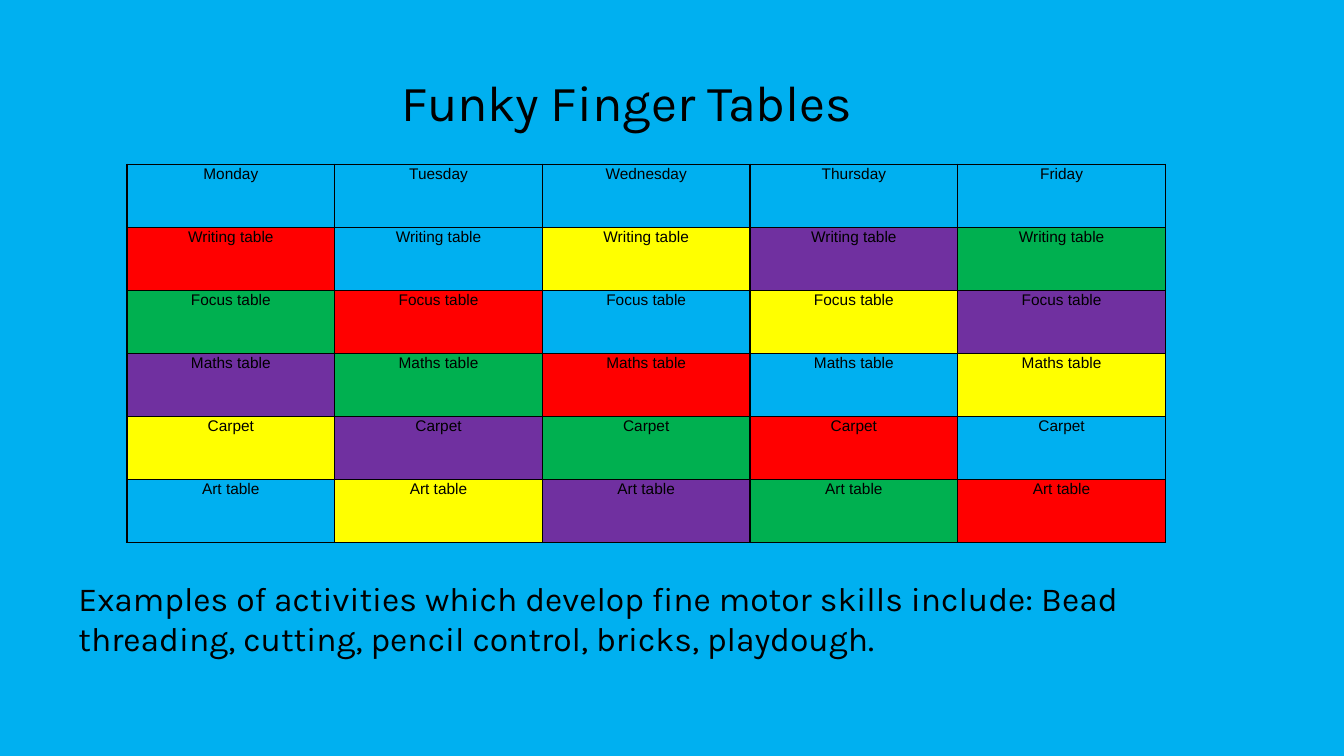
from dataclasses import dataclass

from lxml import etree
from pptx import Presentation
from pptx.dml.color import RGBColor
from pptx.enum.text import MSO_ANCHOR, MSO_AUTO_SIZE, PP_ALIGN
from pptx.oxml.ns import qn
from pptx.util import Inches, Pt

TOP = MSO_ANCHOR.TOP
FIXED = MSO_AUTO_SIZE.NONE
CENTER = PP_ALIGN.CENTER
TITLE_ONLY = 5


@dataclass(frozen=True)
class Theme:
    ink: str = "000000"
    sky: str = "00B0F0"
    red: str = "FF0000"
    yellow: str = "FFFF00"
    purple: str = "7030A0"
    green: str = "00B050"
    face: str = "Karla"
    grid_face: str = "Arial"
    title: int = 36
    body: int = 24
    cell: int = 11


THEME = Theme()
GROUPS = [THEME.red, THEME.sky, THEME.yellow, THEME.purple, THEME.green]
DAYS = ["Monday", "Tuesday", "Wednesday", "Thursday", "Friday"]
PLACES = ["Writing table", "Focus table", "Maths table", "Carpet", "Art table"]


def place(shape, box):
    shape.left, shape.top, shape.width, shape.height = map(Inches, box)


def style(para, face, size):
    para.font.name = face
    para.font.size = Pt(size)
    para.font.color.rgb = RGBColor.from_string(THEME.ink)


def add_title(slide, box, text):
    title = slide.shapes.title
    place(title, box)
    frame = title.text_frame
    frame.text = text
    frame.vertical_anchor = TOP
    frame.auto_size = FIXED
    para = frame.paragraphs[0]
    para.alignment = CENTER
    style(para, THEME.face, THEME.title)


def add_border(cell):
    props = cell._tc.get_or_add_tcPr()
    for side in ("lnL", "lnR", "lnT", "lnB"):
        line = etree.SubElement(props, qn(f"a:{side}"), w=str(Pt(1)))
        fill = etree.SubElement(line, qn("a:solidFill"))
        etree.SubElement(fill, qn("a:srgbClr"), val=THEME.ink)


def fill_cell(cell, text, color=None):
    cell.margin_left = cell.margin_right = Inches(0.07)
    cell.margin_top = cell.margin_bottom = 0
    cell.vertical_anchor = TOP
    add_border(cell)
    if color:
        cell.fill.solid()
        cell.fill.fore_color.rgb = RGBColor.from_string(color)
    else:
        cell.fill.background()
    cell.text = text
    para = cell.text_frame.paragraphs[0]
    para.alignment = CENTER
    para.line_spacing = 1.07
    para.space_after = Pt(8)
    style(para, THEME.grid_face, THEME.cell)


def add_rota(slide, box):
    """Each day, every colour group moves on to the next place."""
    rows, cols = len(PLACES) + 1, len(DAYS)
    table = slide.shapes.add_table(rows, cols, *map(Inches, box)).table
    table.first_row = table.horz_banding = False
    for col, day in enumerate(DAYS):
        fill_cell(table.cell(0, col), day)
        for row, spot in enumerate(PLACES):
            color = GROUPS[(col - row) % len(GROUPS)]
            fill_cell(table.cell(row + 1, col), spot, color)


def add_note(slide, box, text):
    frame = slide.shapes.add_textbox(*map(Inches, box)).text_frame
    frame.word_wrap = True
    frame.text = text
    style(frame.paragraphs[0], THEME.face, THEME.body)


def main():
    deck = Presentation()
    deck.slide_width, deck.slide_height = Inches(13.33), Inches(7.5)
    slide = deck.slides.add_slide(deck.slide_layouts[TITLE_ONLY])
    back = slide.background.fill
    back.solid()
    back.fore_color.rgb = RGBColor.from_string(THEME.sky)
    add_title(slide, (1.52, 0.66, 9.4, 1.44), "Funky Finger Tables")
    add_rota(slide, (1.26, 1.63, 10.3, 3.75))
    add_note(slide, (0.68, 5.68, 11.44, 0.91),
             "Examples of activities which develop fine motor skills include: "
             "Bead threading, cutting, pencil control, bricks, playdough.")
    deck.save("out.pptx")


if __name__ == "__main__":
    main()
